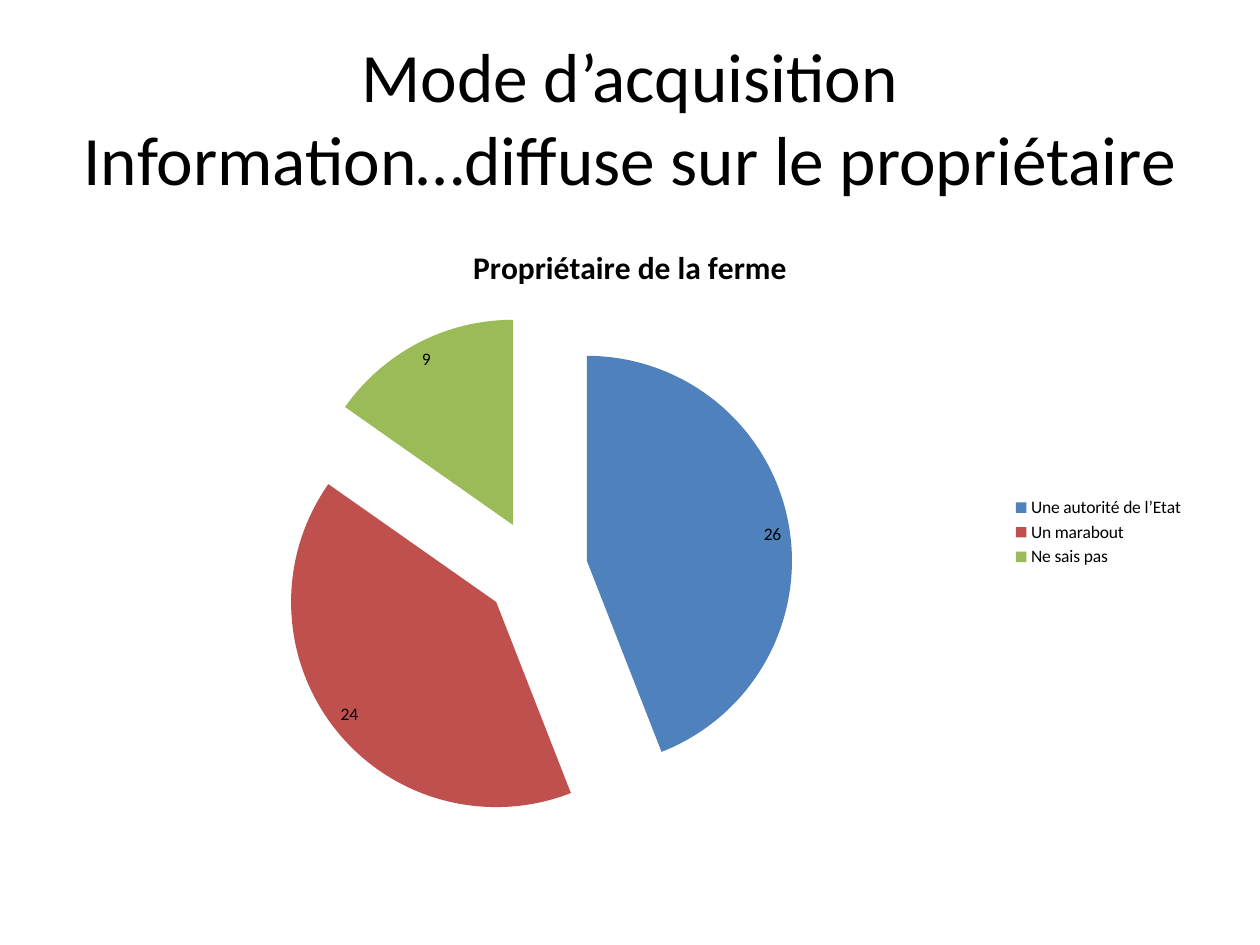
from pptx import Presentation
from pptx import util as u
from pptx.chart.data import CategoryChartData
from pptx.dml.color import RGBColor
from pptx.enum import chart as charts, text
from pptx.oxml import parse_xml
from pptx.oxml.ns import nsdecls, qn

COLORS = {"ink": "000000", "state": "4F81BD", "marabout": "C0504D", "unknown": "9BBB59"}


class Deck:
    font = "Calibri"

    def __init__(self, width, height):
        self.prs = Presentation()
        self.prs.slide_width = u.Pt(width)
        self.prs.slide_height = u.Pt(height)
        self.s = self.prs.slides.add_slide(self.prs.slide_layouts[6])

    def color(self, name):
        return RGBColor.from_string(COLORS[name])

    def style(self, font, size, bold=False):
        font.name = self.font
        font.size = u.Pt(size)
        font.bold = bold
        font.color.rgb = self.color("ink")

    def title(self, lines, box, size):
        tf = self.s.shapes.add_textbox(*map(u.Pt, box)).text_frame
        tf.word_wrap = True
        tf.vertical_anchor = text.MSO_ANCHOR.MIDDLE
        p = tf.paragraphs[0]
        p.text = "\v".join(lines)
        p.alignment = text.PP_ALIGN.CENTER
        self.style(p.font, size)

    def pie(self, heading, slices, box, explosion):
        data = CategoryChartData()
        data.categories = [label for label, _, _ in slices]
        data.add_series("Series 1", [value for _, value, _ in slices])
        chart = self.s.shapes.add_chart(
            charts.XL_CHART_TYPE.PIE, *map(u.Pt, box), data).chart
        self.style(chart.font, 10)

        chart.has_title = True
        p = chart.chart_title.text_frame.paragraphs[0]
        p.text = heading
        self.style(p.font, 18, bold=True)

        chart.has_legend = True
        chart.legend.position = charts.XL_LEGEND_POSITION.RIGHT
        chart.legend.include_in_layout = False
        self.style(chart.legend.font, 10)

        plot = chart.plots[0]
        plot.vary_by_categories = True
        series = plot.series[0]
        series._element.find(qn("c:tx")).addnext(
            parse_xml(f'<c:explosion {nsdecls("c")} val="{explosion}"/>'))
        for i, (_, _, name) in enumerate(slices):
            fill = series.points[i].format.fill
            fill.solid()
            fill.fore_color.rgb = self.color(name)

        labels = series.data_labels
        labels.show_value = True
        labels.position = charts.XL_LABEL_POSITION.INSIDE_END
        self.style(labels.font, 10)

    def save(self):
        self.prs.save("out.pptx")


def main():
    deck = Deck(720, 540)
    deck.title(["Mode d’acquisition", "Information…diffuse sur le propriétaire"],
               (36, 21.6, 648, 90), 39.6)
    deck.pie("Propriétaire de la ferme",
             [("Une autorité de l’Etat", 26, "state"),
              ("Un marabout", 24, "marabout"),
              ("Ne sais pas", 9, "unknown")],
             (36, 126, 648, 356.4), explosion=25)
    deck.save()


if __name__ == "__main__":
    main()
